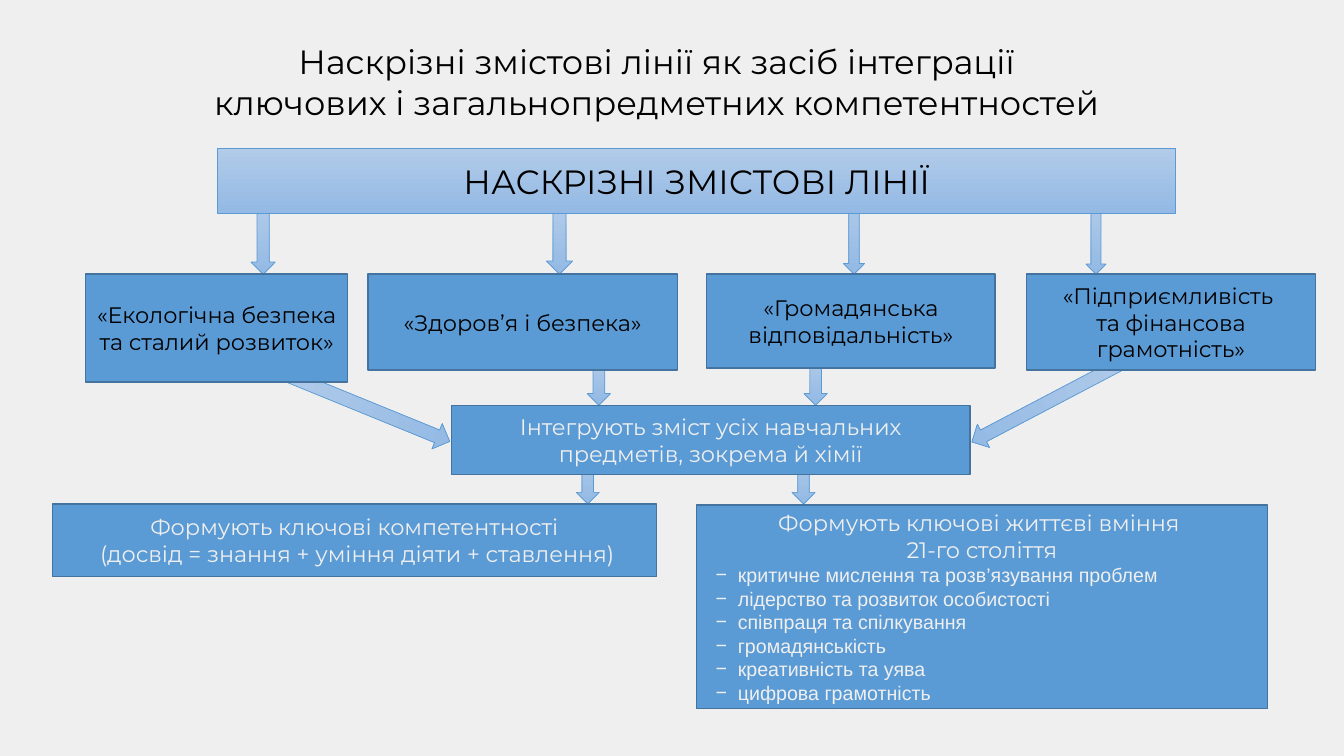
from pptx import Presentation, util as u
from pptx.dml.color import RGBColor
from pptx.enum import shapes, text
from lxml import etree

# Content
TITLE = ["Наcкрізні змістові лінії як засіб інтеграції ",
         "ключових і загальнопредметних компетентностей "]
HEADER = ["НАСКРІЗНІ ЗМІСТОВІ ЛІНІЇ"]
THEMES = [  # left, width, height, lines
    (0.85, 2.6, 1.07, ["«Екологічна безпека та сталий розвиток»"]),
    (3.65, 3.07, 0.95, ["«Здоров’я і безпека»"]),
    (7.01, 2.86, 0.93, ["«Громадянська відповідальність»"]),
    (10.18, 2.87, 0.95, ["«Підприємливість ", "та фінансова грамотність»"]),
]
INTEGRATION = ["Інтегрують зміст усіх навчальних предметів, зокрема й хімії"]
COMPETENCES = ["Формують ключові компетентності",
               " (досвід = знання + уміння діяти + ставлення)"]
SKILLS_HEAD = ["Формують ключові життєві вміння ", "21-го століття"]
SKILLS = ["критичне мислення та розв’язування проблем",
          "лідерство та розвиток особистості",
          "співпраця та спілкування",
          "громадянськість",
          "креативність та уява",
          "цифрова грамотність"]

# Layout in inches: tops of the rows of boxes
HEADER_TOP, THEME_TOP, MIDDLE_TOP, RESULT_TOP = 1.47, 2.72, 4.02, 5.0
# Arrows by the row they point at: centre, width, length
DOWN_ARROWS = {
    THEME_TOP: [(2.61, 0.24, 0.7), (5.55, 0.26, 0.66),
                (8.47, 0.21, 0.82), (10.87, 0.2, 0.74)],
    MIDDLE_TOP: [(5.94, 0.23, 0.5), (8.09, 0.23, 0.5)],
    RESULT_TOP: [(5.83, 0.23, 0.5), (7.97, 0.23, 0.5)],
}
# Slanted arrows: left, top, width, length, rotation
SLANTED_ARROWS = [(3.52, 3.18, 0.27, 1.74, 292.2),
                  (10.28, 3.11, 0.26, 1.74, 62.3)]

PAPER, INK, BLUE, EDGE = "EFEFEF", "000000", "5B9BD5", "43739E"
LIGHT, DEEP = "B1CBE9", "93B9E4"

deck = Presentation()
deck.slide_width, deck.slide_height = u.Inches(13.33), u.Inches(7.5)
page = deck.slides.add_slide(deck.slide_layouts[6])


def color(value):
    return RGBColor.from_string(value)


def write(box, lines, size=16, font="Montserrat", ink=PAPER, bullet=None):
    """Add one paragraph per line, filling the empty first one if unused."""
    frame = box.text_frame
    frame.word_wrap = True
    for line in lines:
        para = frame.paragraphs[0] if not frame.text else frame.add_paragraph()
        para.alignment = text.PP_ALIGN.LEFT if bullet else text.PP_ALIGN.CENTER
        if bullet:
            props = para._p.get_or_add_pPr()
            props.set("marL", str(u.Inches(0.31)))
            props.set("indent", str(u.Inches(-0.22)))
            namespace = props.nsmap["a"]
            etree.SubElement(props, f"{{{namespace}}}buFont", typeface=font)
            etree.SubElement(props, f"{{{namespace}}}buChar", char=bullet)
        span = para.add_run()
        span.text = line
        span.font.size, span.font.name = u.Pt(size), font
        span.font.color.rgb = color(ink)


def add_part(kind, left, top, width, height, gradient=False):
    part = page.shapes.add_shape(kind, *map(u.Inches, (left, top, width, height)))
    part.shadow.inherit = False
    if gradient:
        part.fill.gradient()
        part.fill.gradient_angle = 270
        for stop, value in zip(part.fill.gradient_stops, (LIGHT, DEEP)):
            stop.color.rgb = color(value)
            stop.position = float(value == DEEP)
    else:
        part.fill.solid()
        part.fill.fore_color.rgb = color(BLUE)
    part.line.color.rgb = color(BLUE if gradient else EDGE)
    part.line.width = u.Pt(0.5 if gradient else 1)
    return part


def add_box(left, top, width, height, lines, gradient=False, **style):
    box = add_part(shapes.MSO_SHAPE.RECTANGLE, left, top, width, height, gradient)
    box.text_frame.vertical_anchor = text.MSO_ANCHOR.MIDDLE
    write(box, lines, **style)
    return box


def add_arrow(left, top, width, length, rotation=0):
    arrow = add_part(shapes.MSO_SHAPE.DOWN_ARROW, left, top, width, length, True)
    arrow.rotation = rotation


# Background and title
page.background.fill.solid()
page.background.fill.fore_color.rgb = color(PAPER)
title = page.shapes.add_textbox(*map(u.Inches, (0.95, 0.36, 11.21, 0.91)))
write(title, TITLE, size=24, ink=INK)

# Arrows, partly hidden by the boxes drawn after them
for target, arrows in DOWN_ARROWS.items():
    for center, width, length in arrows:
        add_arrow(center - width / 2, target - length, width, length)
for arrow in SLANTED_ARROWS:
    add_arrow(*arrow)

# Boxes, row by row
add_box(2.16, HEADER_TOP, 9.5, 0.65, HEADER, gradient=True, size=24, ink=INK)
for left, width, height, lines in THEMES:
    add_box(left, THEME_TOP, width, height, lines, ink=INK)
add_box(4.48, MIDDLE_TOP, 5.14, 0.69, INTEGRATION)
add_box(0.52, RESULT_TOP, 5.99, 0.72, COMPETENCES)
skills = add_box(6.91, RESULT_TOP + 0.01, 5.66, 2.02, SKILLS_HEAD)
write(skills, SKILLS, size=14, font="Arial", bullet="−")

deck.save("out.pptx")
